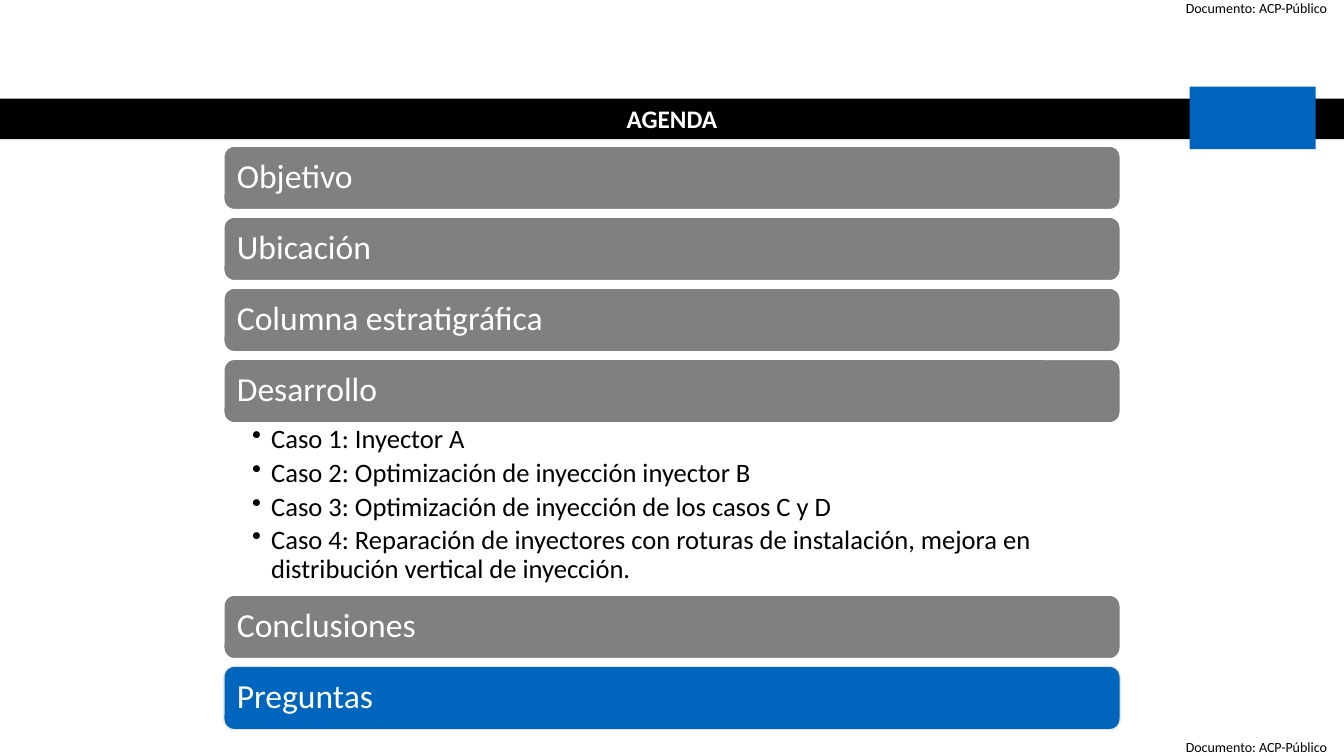
from dataclasses import dataclass

import pptx
import pptx.dml.color
import pptx.enum.shapes
import pptx.enum.text
import pptx.oxml.ns
import pptx.util
from lxml import etree

Inches = pptx.util.Inches
Pt = pptx.util.Pt
SHAPE = pptx.enum.shapes.MSO_SHAPE
ALIGN = pptx.enum.text.PP_ALIGN
ANCHOR = pptx.enum.text.MSO_ANCHOR


@dataclass(frozen=True)
class Theme:
    font: str = "Calibri"
    black: str = "000000"
    white: str = "FFFFFF"
    gray: str = "808080"
    blue: str = "0065BD"
    logo_blue: str = "0063BD"
    pale: str = "E7E6E6"
    label_size: int = 10
    title_size: int = 18
    topic_size: int = 24
    case_size: int = 19


THEME = Theme()

CLASSIFICATION = "Documento: ACP-Público"
CASES = [
    "Caso 1: Inyector A",
    "Caso 2: Optimización de inyección inyector B",
    "Caso 3: Optimización de inyección de los casos C y D",
    "Caso 4: Reparación de inyectores con roturas de instalación, "
    "mejora en distribución vertical de inyección.",
]
TOPICS = [
    ("Objetivo", []),
    ("Ubicación", []),
    ("Columna estratigráfica", []),
    ("Desarrollo", CASES),
    ("Conclusiones", []),
    ("Preguntas", []),
]


def rgb(color):
    return pptx.dml.color.RGBColor.from_string(color)


def set_attrs(target, values):
    for name, value in values.items():
        setattr(target, name, value)


def set_frame(tf, insets, anchor, wrap=True):
    left, top, right, bottom = map(Inches, insets)
    set_attrs(tf, {
        "margin_left": left, "margin_top": top,
        "margin_right": right, "margin_bottom": bottom,
        "vertical_anchor": anchor, "word_wrap": wrap,
    })


def write(p, text, size, color, bold=False, **layout):
    set_attrs(p, layout)
    r = p.add_run()
    r.text = text
    set_attrs(r.font, {"name": THEME.font, "size": Pt(size), "bold": bold})
    r.font.color.rgb = rgb(color)


def add_block(s, kind, box, fill, line=None):
    sp = s.shapes.add_shape(kind, *map(Inches, box))
    sp.shadow.inherit = False
    sp.fill.solid()
    sp.fill.fore_color.rgb = rgb(fill)
    if line:
        sp.line.color.rgb = rgb(line)
        sp.line.width = Pt(1)
    else:
        sp.line.fill.background()
    return sp


def add_label(s, box):
    tf = s.shapes.add_textbox(*map(Inches, box)).text_frame
    set_frame(tf, (0, 0, 0, 0), ANCHOR.TOP, wrap=False)
    write(tf.paragraphs[0], CLASSIFICATION, THEME.label_size, THEME.black,
          alignment=ALIGN.RIGHT)


def add_header(s, box):
    left, top, width, height = box
    tf = add_block(s, SHAPE.RECTANGLE, box, THEME.black).text_frame
    set_frame(tf, (0.1, 0.05, 0.1, 0.05), ANCHOR.MIDDLE)
    write(tf.paragraphs[0], "AGENDA", THEME.title_size, THEME.white, True,
          alignment=ALIGN.CENTER)
    logo_box = (left + width - 1.53, top - 0.12, 1.25, 0.62)
    add_block(s, SHAPE.RECTANGLE, logo_box, THEME.logo_blue)


def add_topic(s, box, text, fill, line):
    tf = add_block(s, SHAPE.ROUNDED_RECTANGLE, box, fill, line).text_frame
    set_frame(tf, (0.1, 0.1, 0.1, 0.1), ANCHOR.MIDDLE)
    write(tf.paragraphs[0], text, THEME.topic_size, THEME.white,
          alignment=ALIGN.LEFT, line_spacing=0.9)


def add_cases(s, box, cases):
    tf = s.shapes.add_textbox(*map(Inches, box)).text_frame
    set_frame(tf, (0.28, 0.03, 0.19, 0.03), ANCHOR.TOP)
    for i, case in enumerate(cases):
        p = tf.add_paragraph() if i else tf.paragraphs[0]
        pPr = p._p.get_or_add_pPr()
        pPr.set("marL", str(Inches(0.19)))
        pPr.set("indent", str(-Inches(0.19)))
        bullet = etree.SubElement(pPr, pptx.oxml.ns.qn("a:buChar"))
        bullet.set("char", "•")
        write(p, case, THEME.case_size, THEME.black, level=1,
              line_spacing=0.9, space_after=Pt(3.5))


def add_agenda(s, box):
    left, top, width, height = box
    bar, cases_height = 0.63, 1.71
    plain_gaps = sum(not cases for _, cases in TOPICS[:-1])
    gap = (height - bar * len(TOPICS) - cases_height) / plain_gaps
    for topic, cases in TOPICS:
        last = topic == TOPICS[-1][0]
        fill, line = (THEME.blue, THEME.pale) if last else (THEME.gray, THEME.white)
        add_topic(s, (left, top, width, bar), topic, fill, line)
        top += bar
        if cases:
            add_cases(s, (left, top, width, cases_height), cases)
        top += cases_height if cases else gap


def main():
    prs = pptx.Presentation()
    prs.slide_width = Inches(13.33)
    prs.slide_height = Inches(7.5)
    s = prs.slides.add_slide(prs.slide_layouts[6])
    for top in (0, 7.33):
        add_label(s, (11.74, top, 1.42, 0.17))
    add_agenda(s, (2.22, 1.45, 8.89, 5.79))
    add_header(s, (0, 0.98, 13.33, 0.4))
    prs.save("out.pptx")


if __name__ == "__main__":
    main()
